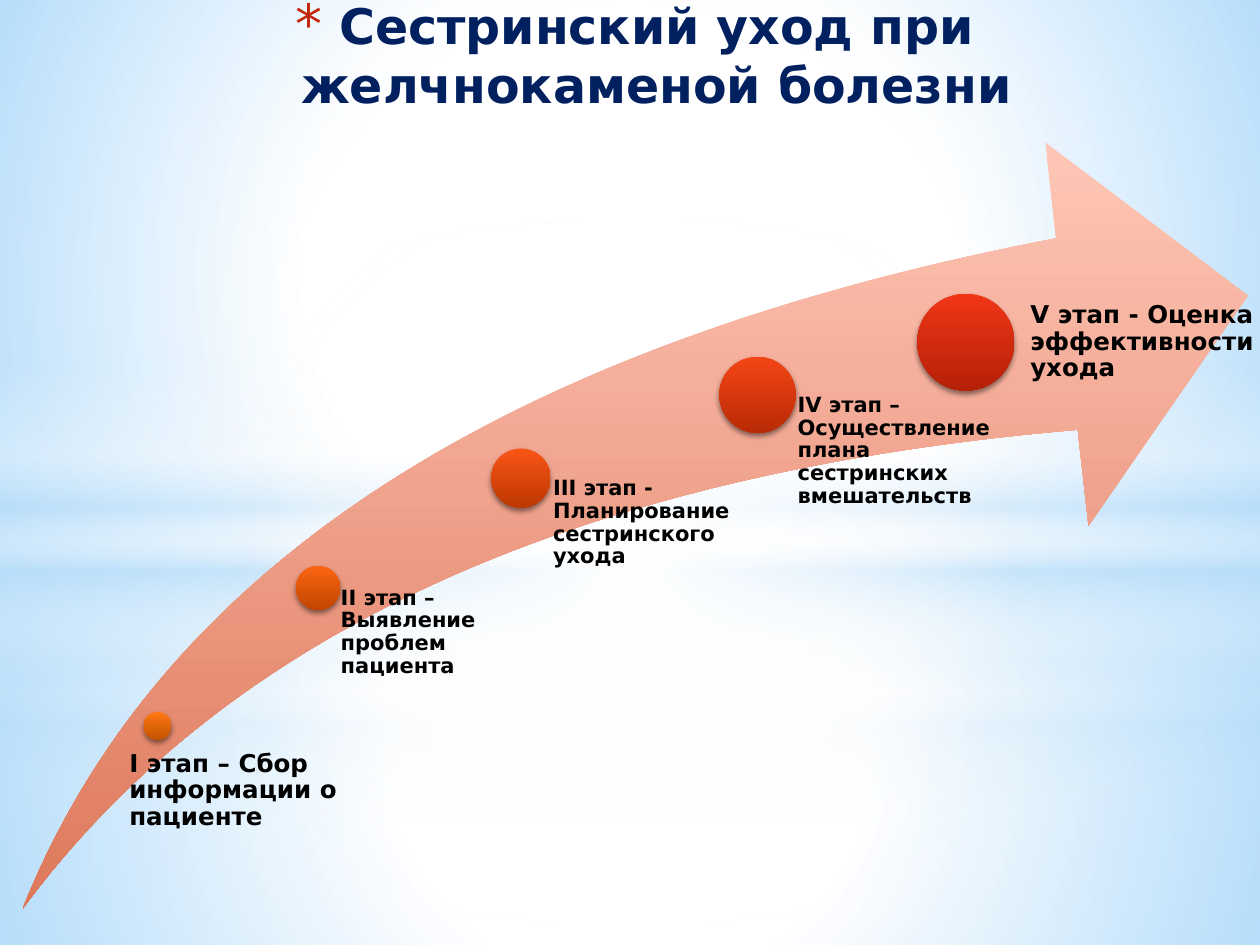
from dataclasses import dataclass

from pptx import Presentation
from pptx.dml.color import RGBColor as Rgb
from pptx.enum.shapes import MSO_SHAPE as Preset
from pptx.enum.text import MSO_ANCHOR as Anchor, MSO_AUTO_SIZE as AutoSize, PP_ALIGN as Align
from pptx.oxml import parse_xml
from pptx.oxml.ns import nsdecls
from pptx.util import Pt


@dataclass(frozen=True)
class Theme:
    font: str = "DejaVu Sans"
    navy: str = "002060"
    black: str = "000000"
    white: str = "FFFFFF"
    sky: str = "B4DCFA"
    bullet: str = "C3260C"
    arrow: tuple = ("FFC6B6", "DD785B")
    title_size: int = 28
    bullet_percent: int = 110
    large: int = 14
    small: int = 12


THEME = Theme()

STEPS = [
    ("I этап – Сбор информации о пациенте", THEME.large,
     (82.1, 406.8, 15.8), (65.5, 429.1, 134, 104.4), ("FF7813", "C45400")),
    ("II этап – Выявление проблем пациента", THEME.small,
     (169.2, 323.3, 25.2), (181.4, 335.5, 116, 183.6), ("FB6614", "C24500")),
    ("III этап - Планирование сестринского ухода", THEME.small,
     (280.8, 256.3, 33.8), (298.1, 272.9, 135.4, 246.2), ("F85515", "BE3802")),
    ("IV этап – Осуществление плана сестринских вмешательств", THEME.small,
     (411.1, 203.8, 43.6), (432.7, 225.4, 139.7, 293), ("F44516", "B92B05")),
    ("V этап - Оценка эффективности ухода", THEME.large,
     (524.2, 167.8, 55.4), (559.4, 172.8, 167.8, 307.4), ("F03617", "B52007")),
]


def gradient(stops, radial=False):
    marks = "".join(
        f'<a:gs pos="{place * 1000}"><a:srgbClr val="{color}">'
        f'<a:alpha val="{alpha * 1000}"/></a:srgbClr></a:gs>'
        for place, color, alpha in stops
    )
    direction = (
        '<a:path path="circle"><a:fillToRect l="50000" t="50000" r="50000" b="50000"/></a:path>'
        if radial else '<a:lin ang="5400000" scaled="0"/>'
    )
    return parse_xml(
        f'<a:gradFill {nsdecls("a")} rotWithShape="1"><a:gsLst>{marks}</a:gsLst>{direction}</a:gradFill>'
    )


def add_filled(page, preset, frame, stops, radial=False):
    shape = page.shapes.add_shape(preset, *map(Pt, frame))
    shape.line.fill.background()
    shape.shadow.inherit = False
    properties = shape._element.spPr
    properties.insert(2, gradient(stops, radial))
    return shape


def add_shadow(shape):
    effects = shape._element.spPr[-1]
    effects.append(parse_xml(
        f'<a:outerShdw {nsdecls("a")} blurRad="{Pt(3.1)}" dist="{Pt(1.8)}" dir="5400000" '
        f'algn="ctr" rotWithShape="0"><a:srgbClr val="{THEME.black}">'
        '<a:alpha val="45000"/></a:srgbClr></a:outerShdw>'
    ))


def add_bullet(para, character, indent):
    properties = para._p.get_or_add_pPr()
    properties.set("marL", str(Pt(indent)))
    properties.set("indent", str(-Pt(indent)))
    for markup in (
        f'<a:buClr {nsdecls("a")}><a:srgbClr val="{THEME.bullet}"/></a:buClr>',
        f'<a:buSzPct {nsdecls("a")} val="{THEME.bullet_percent * 1000}"/>',
        f'<a:buFont {nsdecls("a")} typeface="{THEME.font}"/>',
        f'<a:buChar {nsdecls("a")} char="{character}"/>',
    ):
        properties.append(parse_xml(markup))


def write(para, text, *, size, color, align=Align.LEFT, spacing=1.0):
    para.alignment = align
    para.line_spacing = spacing
    span = para.add_run()
    span.text = text
    span.font.name = THEME.font
    span.font.size = Pt(size)
    span.font.bold = True
    span.font.color.rgb = Rgb.from_string(color)


def add_backdrop(page, seam, band_top, boost, glow_edge):
    white, sky = THEME.white, THEME.sky
    lower = [(0, white, 91 + boost), (37, white, 76 + boost), (100, sky, 79 + boost)]
    upper = [(0, white, 89 + boost), (48, white, 62 + boost), (100, sky, 79 + boost)]
    band = [(0, white, 0), (29, white, 30), (45, sky, 40),
            (55, white, 26), (65, sky, 60), (100, white, 0)]
    glow = [(0, white, 100), (glow_edge, white, 0)]
    add_filled(page, Preset.RECTANGLE, (0, seam, 720, 540 - seam), lower, radial=True)
    add_filled(page, Preset.RECTANGLE, (0, 0, 720, seam), upper, radial=True)
    add_filled(page, Preset.RECTANGLE, (0, band_top, 720, 180), band)
    add_filled(page, Preset.OVAL, (0, 126, 720, 402), glow, radial=True)


def place_title(page, text):
    title = page.shapes.title
    page.shapes._spTree.append(title._element)
    title.left, title.top, title.width, title.height = map(Pt, (127.4, 0, 470.2, 68.4))
    frame = title.text_frame
    frame.auto_size = AutoSize.NONE
    frame.vertical_anchor = Anchor.BOTTOM
    para = frame.paragraphs[0]
    add_bullet(para, "*", indent=25.2)
    write(para, text, size=THEME.title_size, color=THEME.navy, align=Align.CENTER)


def add_arrow(page):
    top, bottom = THEME.arrow
    arrow = add_filled(page, Preset.SWOOSH_ARROW, (13, 81.4, 700, 437.8),
                       [(0, top, 100), (100, bottom, 100)])
    arrow.adjustments[0] = 0.25
    arrow.adjustments[1] = 0.25


def add_step(page, text, size, dot, label, colors):
    left, top, diameter = dot
    light, dark = colors
    add_shadow(add_filled(page, Preset.OVAL, (left, top, diameter, diameter),
                          [(0, light, 100), (100, dark, 100)]))
    box = page.shapes.add_textbox(*map(Pt, label))
    frame = box.text_frame
    frame.word_wrap = True
    frame.margin_left = Pt(diameter * 0.53)
    frame.margin_top = frame.margin_right = frame.margin_bottom = 0
    write(frame.paragraphs[0], text, size=size, color=THEME.black, spacing=0.9)


def main():
    deck = Presentation()
    deck.slide_width, deck.slide_height = Pt(720), Pt(540)
    page = deck.slides.add_slide(deck.slide_layouts[5])
    add_backdrop(page, seam=402, band_top=297, boost=0, glow_edge=56)
    add_backdrop(page, seam=304.6, band_top=209, boost=1, glow_edge=54)
    place_title(page, "Сестринский уход при желчнокаменой болезни")
    add_arrow(page)
    for step in STEPS:
        add_step(page, *step)
    deck.save("out.pptx")


if __name__ == "__main__":
    main()
